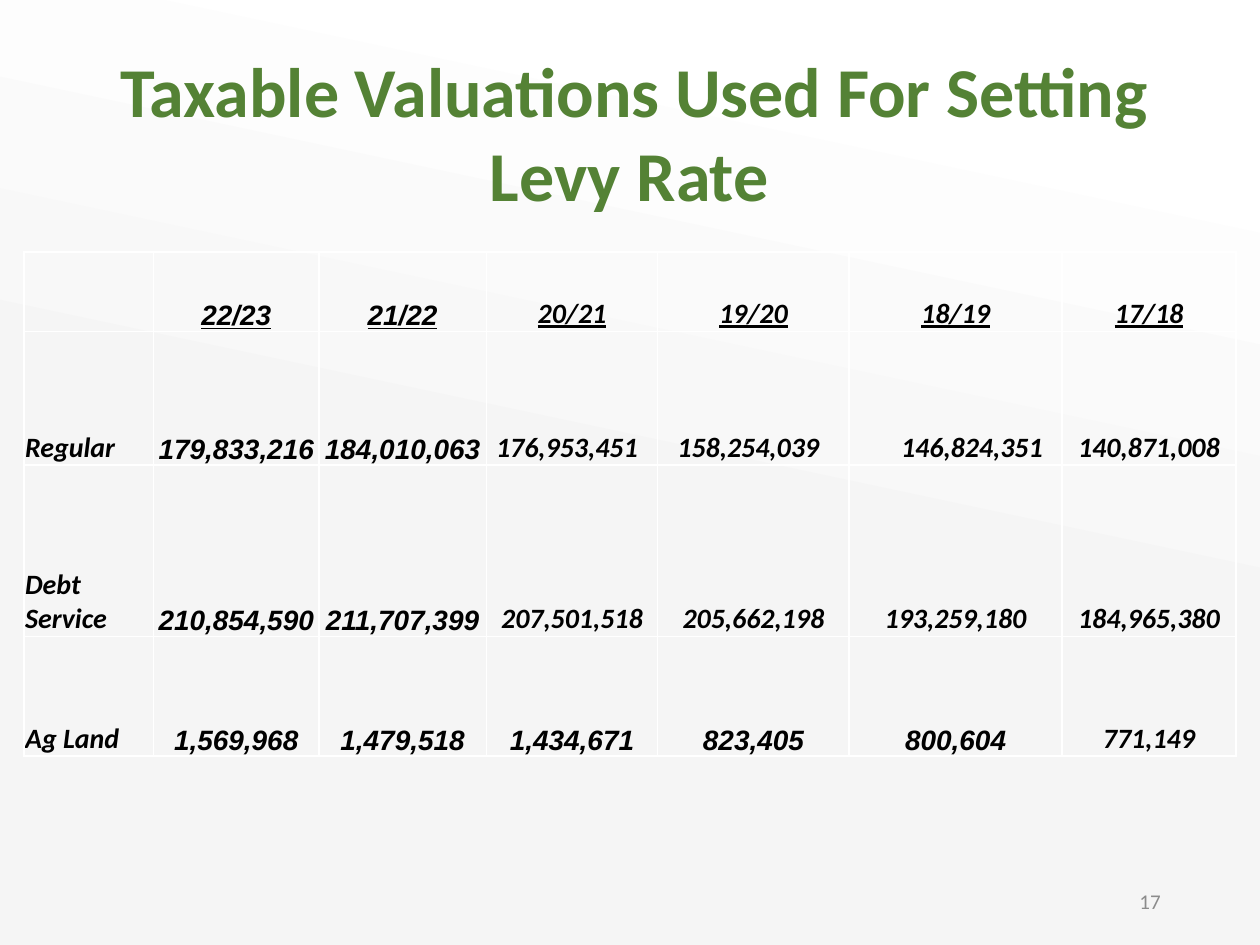
from pptx import Presentation
from pptx.dml.color import RGBColor
from pptx.enum.text import MSO_ANCHOR as Anchor, PP_ALIGN as Align
from pptx.oxml import parse_xml
from pptx.oxml.ns import nsdecls
from pptx.util import Inches, Pt

WHITE = RGBColor(0xFF, 0xFF, 0xFF)
PALE = RGBColor(0xF5, 0xF5, 0xF5)
GREEN = RGBColor(0x54, 0x82, 0x35)
GREY = RGBColor(0x8C, 0x8C, 0x8C)
BLACK = RGBColor(0, 0, 0)

COL_WIDTHS = [1.03, 1.31, 1.33, 1.36, 1.52, 1.69, 1.38]
ROW_HEIGHTS = [0.63, 1.06, 1.36, 0.95]
VALUATIONS = [
    ["", "22/23", "21/22", "20/21", "19/20", "18/19", "17/18"],
    ["Regular", "179,833,216", "184,010,063", "176,953,451",
     "158,254,039", "146,824,351", "140,871,008"],
    ["Debt Service", "210,854,590", "211,707,399", "207,501,518",
     "205,662,198", "193,259,180", "184,965,380"],
    ["Ag Land", "1,569,968", "1,479,518", "1,434,671",
     "823,405", "800,604", "771,149"],
]
# (left, right) margins of the cells whose figures sit off centre
SHIFTED = {(1, 3): (0.01, 0.09), (1, 4): (0.01, 0.09), (1, 5): (0.27, 0.01)}


def style_font(font, size, color, name="Calibri"):
    font.name, font.size = name, Pt(size)
    font.color.rgb = color


def add_borders(cell):
    """Draw a thin white line on all four sides of the cell."""
    tcPr = cell._tc.get_or_add_tcPr()
    for i, side in enumerate(("lnL", "lnR", "lnT", "lnB")):
        tcPr.insert(i, parse_xml(
            f'<a:{side} {nsdecls("a")} w="{Pt(1)}"><a:solidFill>'
            f'<a:srgbClr val="{WHITE}"/></a:solidFill></a:{side}>'))


prs = Presentation()
prs.slide_width, prs.slide_height = Inches(10), Inches(7.5)
s = prs.slides.add_slide(prs.slide_layouts[6])

# Background
fill = s.background.fill
fill.gradient()
fill.gradient_angle = 360 - 102
for stop, position, color in zip(fill.gradient_stops, (0.1, 0.56), (WHITE, PALE)):
    stop.position = position
    stop.color.rgb = color

# Slide number
number = s.shapes.add_textbox(Inches(7.06), Inches(6.95), Inches(2.25), Inches(0.4))
tf = number.text_frame
tf.word_wrap = True
tf.vertical_anchor = Anchor.MIDDLE
p = tf.paragraphs[0]
p.text = "17"
p.alignment = Align.RIGHT
style_font(p.font, 12, GREY)

# Title, its lines nudged off centre by their indents
title = s.shapes.add_textbox(Inches(0.33), Inches(0.33), Inches(9.33), Inches(4.78))
tf = title.text_frame
tf.word_wrap = True
tf.text = "Taxable Valuations Used For Setting\nLevy Rate"
for p, indent in zip(tf.paragraphs, (0.08, -0.8)):
    p.alignment = Align.CENTER
    p.font.bold = True
    style_font(p.font, 40, GREEN)
    p._p.get_or_add_pPr().set("indent", str(Inches(indent)))

# Valuations table
table = s.shapes.add_table(len(ROW_HEIGHTS), len(COL_WIDTHS), Inches(0.19), Inches(2),
                           Inches(9.62), Inches(4)).table
table.first_row = table.horz_banding = False
for column, width in zip(table.columns, COL_WIDTHS):
    column.width = Inches(width)
for row, height in zip(table.rows, ROW_HEIGHTS):
    row.height = Inches(height)

for r, values in enumerate(VALUATIONS):
    last_arial = 5 if r == 3 else 2
    for c, value in enumerate(values):
        cell = table.cell(r, c)
        cell.fill.background()
        add_borders(cell)
        cell.vertical_anchor = Anchor.BOTTOM
        left, right = SHIFTED.get((r, c), (0.01, 0.01))
        cell.margin_left, cell.margin_right = Inches(left), Inches(right)
        cell.margin_top, cell.margin_bottom = Inches(0.01), 0
        cell.text = value
        p = cell.text_frame.paragraphs[0]
        p.alignment = Align.CENTER if c else Align.LEFT
        style_font(p.font, 16, BLACK, "Arial" if 1 <= c <= last_arial else "Calibri")
        p.font.bold = p.font.italic = True
        p.font.underline = r == 0

prs.save("out.pptx")
